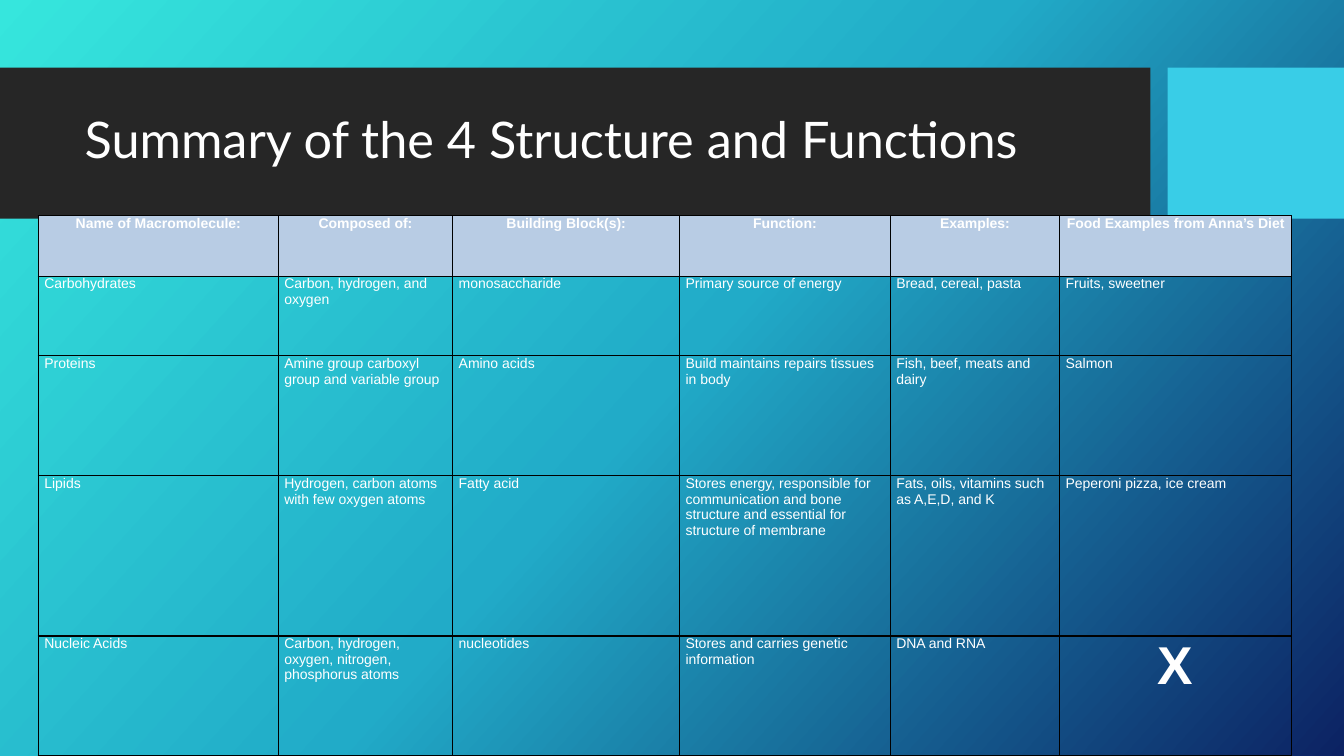
from copy import deepcopy
from dataclasses import dataclass

from lxml.etree import SubElement
from pptx import Presentation
from pptx.dml.color import RGBColor
from pptx.enum.shapes import MSO_SHAPE
from pptx.enum.text import MSO_ANCHOR, MSO_AUTO_SIZE, PP_ALIGN
from pptx.oxml.ns import qn
from pptx.util import Inches, Pt


@dataclass(frozen=True)
class Theme:
    title_font: str = "Lato"
    table_font: str = "Arial"
    title_size: int = 36
    table_size: int = 10
    mark_size: int = 38
    text: str = "FFFFFF"
    banner: str = "262626"
    accent: str = "39CDE7"
    header: str = "B8CCE4"
    border: str = "000000"
    gradient: tuple = ((0, "36E6DD"), (0.5, "21ABC8"), (1, "0C2263"))
    gradient_angle: int = 42


THEME = Theme()

COLUMN_WIDTHS = (2.38, 1.73, 2.25, 2.09, 1.68, 2.3)
ROW_HEIGHTS = (0.6, 0.79, 1.19, 1.59, 1.19)
MARK = "X"
MACROMOLECULES = (
    ("Name of Macromolecule:", "Composed of:", "Building Block(s):",
     "Function:", "Examples:", "Food Examples from Anna’s Diet"),
    ("Carbohydrates", "Carbon, hydrogen, and oxygen", "monosaccharide",
     "Primary source of energy", "Bread, cereal, pasta", "Fruits, sweetner"),
    ("Proteins", "Amine group carboxyl group and variable group", "Amino acids",
     "Build maintains repairs tissues in body", "Fish, beef, meats and dairy",
     "Salmon"),
    ("Lipids", "Hydrogen, carbon atoms with few oxygen atoms", "Fatty acid",
     "Stores energy, responsible for communication and bone structure and "
     "essential for structure of membrane",
     "Fats, oils, vitamins such as A,E,D, and K", "Peperoni pizza, ice cream"),
    ("Nucleic Acids", "Carbon, hydrogen, oxygen, nitrogen, phosphorus atoms",
     "nucleotides", "Stores and carries genetic information", "DNA and RNA", MARK),
)


def apply_format(target, values):
    for name, value in values.items():
        setattr(target, name, value)


def write_text(frame, text, paragraph_format, font_format):
    paragraph = frame.paragraphs[0]
    run = paragraph.add_run()
    run.text = text
    apply_format(paragraph, paragraph_format)
    apply_format(run.font, font_format)
    run.font.color.rgb = RGBColor.from_string(THEME.text)


def paint_background(slide):
    fill = slide.background.fill
    fill.gradient()
    # python-pptx measures the angle anticlockwise
    fill.gradient_angle = 360 - THEME.gradient_angle
    stop_list = slide.element.find(".//" + qn("a:gsLst"))
    stop_list.append(deepcopy(stop_list[0]))
    for stop, (position, color) in zip(fill.gradient_stops, THEME.gradient):
        stop.position = position
        stop.color.rgb = RGBColor.from_string(color)


def add_band(slide, left, width, color):
    """Add a filled rectangle behind the title."""
    band = slide.shapes.add_shape(
        MSO_SHAPE.RECTANGLE, Inches(left), Inches(0.67), Inches(width), Inches(1.5))
    band.shadow.inherit = False
    band.fill.solid()
    band.fill.fore_color.rgb = RGBColor.from_string(color)
    band.line.fill.background()
    slide.shapes.title.element.addprevious(band.element)


def write_title(slide, text):
    title = slide.shapes.title
    apply_format(title, dict(left=Inches(0.74), top=Inches(0.82),
                             width=Inches(10.51), height=Inches(1.18)))
    apply_format(title.text_frame, dict(
        vertical_anchor=MSO_ANCHOR.MIDDLE, word_wrap=True,
        auto_size=MSO_AUTO_SIZE.NONE))
    write_text(title.text_frame, text,
               dict(alignment=PP_ALIGN.LEFT, line_spacing=0.9),
               dict(name=THEME.title_font, size=Pt(THEME.title_size)))


def draw_borders(cell):
    properties = cell._tc.get_or_add_tcPr()
    for side in ("a:lnL", "a:lnR", "a:lnT", "a:lnB"):
        line = SubElement(properties, qn(side), w=str(Pt(1)))
        fill = SubElement(line, qn("a:solidFill"))
        SubElement(fill, qn("a:srgbClr"), val=THEME.border)


def fill_cell(cell, text, is_header):
    is_mark = text == MARK
    apply_format(cell, dict(
        margin_left=Inches(0.06), margin_right=Inches(0.06),
        margin_top=0, margin_bottom=0, vertical_anchor=MSO_ANCHOR.TOP))
    draw_borders(cell)
    if is_header:
        cell.fill.solid()
        cell.fill.fore_color.rgb = RGBColor.from_string(THEME.header)
    else:
        cell.fill.background()
    centered = is_header or is_mark
    write_text(
        cell.text_frame, text,
        dict(alignment=PP_ALIGN.CENTER if centered else PP_ALIGN.LEFT,
             space_after=Pt(6)),
        dict(name=THEME.table_font, bold=centered,
             size=Pt(THEME.mark_size if is_mark else THEME.table_size)))


def add_summary_table(slide):
    table = slide.shapes.add_table(
        len(ROW_HEIGHTS), len(COLUMN_WIDTHS), Inches(0.38), Inches(2.14),
        Inches(sum(COLUMN_WIDTHS)), Inches(sum(ROW_HEIGHTS))).table
    apply_format(table, dict(first_row=False, horz_banding=False))
    for column, width in zip(table.columns, COLUMN_WIDTHS):
        column.width = Inches(width)
    for row_index, (height, texts) in enumerate(zip(ROW_HEIGHTS, MACROMOLECULES)):
        row = table.rows[row_index]
        row.height = Inches(height)
        for cell, text in zip(row.cells, texts):
            fill_cell(cell, text, is_header=row_index == 0)


def main():
    presentation = Presentation()
    apply_format(presentation, dict(slide_width=Inches(13.33),
                                    slide_height=Inches(7.5)))
    title_only = presentation.slide_layouts.get_by_name("Title Only")
    slide = presentation.slides.add_slide(title_only)
    paint_background(slide)
    add_band(slide, 0, 11.41, THEME.banner)
    add_band(slide, 11.58, 1.75, THEME.accent)
    write_title(slide, "Summary of the 4 Structure and Functions")
    add_summary_table(slide)
    presentation.save("out.pptx")


if __name__ == "__main__":
    main()
